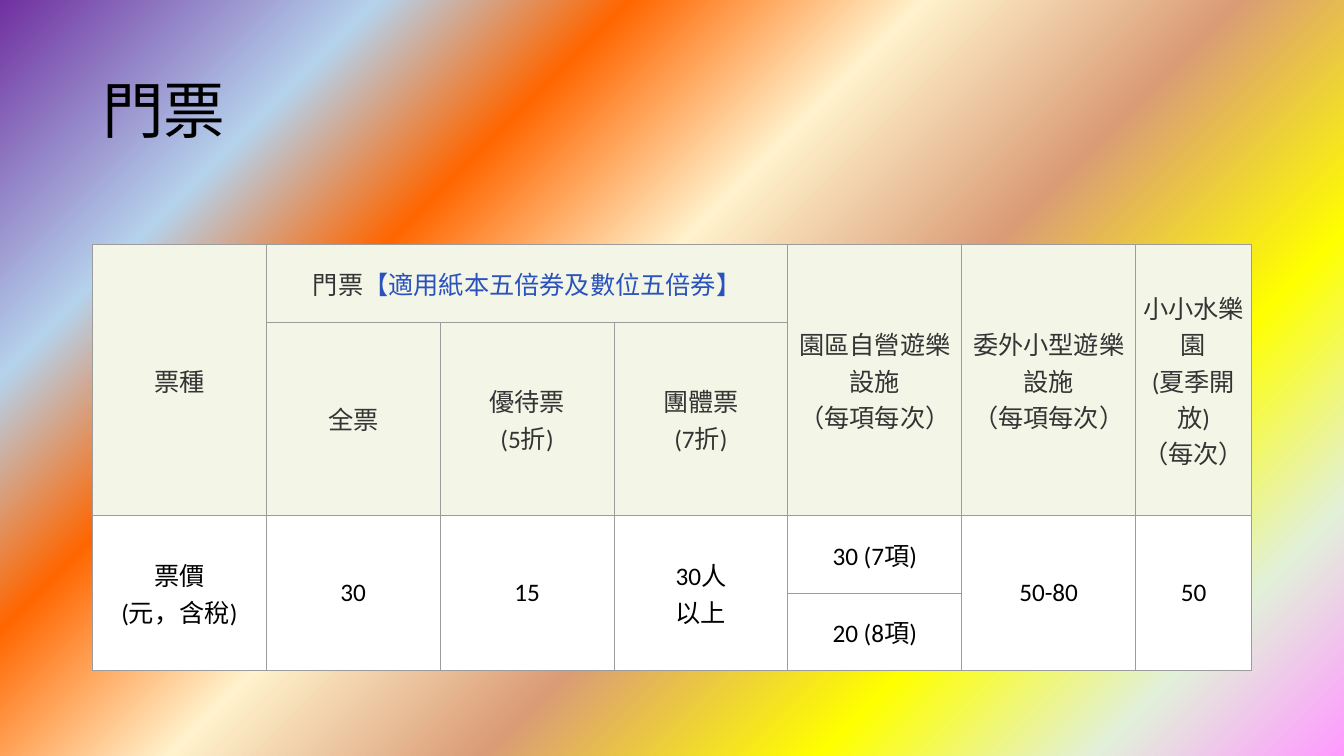
from lxml import etree
from pptx import Presentation
from pptx.dml.color import RGBColor
from pptx.enum.text import MSO_ANCHOR, PP_ALIGN
from pptx.oxml.ns import qn
from pptx.util import Inches, Pt

MIDDLE = MSO_ANCHOR.MIDDLE
LEFT, CENTER = PP_ALIGN.LEFT, PP_ALIGN.CENTER

COLUMNS, ROWS = 160, 90
BLACK, GREY, BLUE = "000000", "343434", "2A52BE"
HEADER_FILL, PRICE_FILL, BORDER = "F3F6E7", "FFFFFF", "9C9C9C"

RAINBOW = [(0, "7030A0"), (18, "B5D2EC"), (30, "FF6600"), (44, "FFF2CC"),
           (59, "DA9C76"), (75, "FFFF00"), (88, "E2F0D9"), (100, "FF99FF")]

COLUMN_WIDTHS = [20.7] * 6 + [13.8]
ROW_HEIGHTS = [9.24, 23.04, 9.24, 9.24]
HEADER_ROWS = 2

TICKETS = [
    (0, 0, 2, 1, [("票種", GREY)]),
    (0, 1, 1, 3, [("門票", GREY), ("【適用紙本五倍券及數位五倍券】", BLUE)]),
    (0, 4, 2, 1, [("園區自營遊樂設施\n（每項每次）", GREY)]),
    (0, 5, 2, 1, [("委外小型遊樂設施\n（每項每次）", GREY)]),
    (0, 6, 2, 1, [("小小水樂園\n(夏季開放)\n（每次）", GREY)]),
    (1, 1, 1, 1, [("全票", GREY)]),
    (1, 2, 1, 1, [("優待票\n(5折)", GREY)]),
    (1, 3, 1, 1, [("團體票\n(7折)", GREY)]),
    (2, 0, 2, 1, [("票價\n(元，含稅)", BLACK)]),
    (2, 1, 2, 1, [("30", BLACK)]),
    (2, 2, 2, 1, [("15", BLACK)]),
    (2, 3, 2, 1, [("30人\n以上", BLACK)]),
    (2, 4, 1, 1, [("30 (7項)", BLACK)]),
    (2, 5, 2, 1, [("50-80", BLACK)]),
    (2, 6, 2, 1, [("50", BLACK)]),
    (3, 4, 1, 1, [("20 (8項)", BLACK)]),
]


def rgb(value):
    return RGBColor.from_string(value)


def apply(target, values):
    for attribute, value in values.items():
        setattr(target, attribute, value)


class TicketSlide:
    """Draws styled elements on one slide, placed in grid columns and rows."""

    font = "Calibri"
    cell_format = {"vertical_anchor": MIDDLE,
                   **{f"margin_{side}": Inches(0.03)
                      for side in ("left", "right", "top", "bottom")}}

    def __init__(self, deck):
        self.slide = deck.slides.add_slide(deck.slide_layouts[6])
        self.column = deck.slide_width / COLUMNS
        self.row = deck.slide_height / ROWS

    def box(self, left, top, width, height):
        return (round(left * self.column), round(top * self.row),
                round(width * self.column), round(height * self.row))

    def background(self, stops, angle):
        fill = self.slide.background.fill
        fill.gradient()
        fill.gradient_angle = 360 - angle
        stop_list = next(self.slide.element.iter(qn("a:gsLst")))
        for stop in list(stop_list):
            stop_list.remove(stop)
        for percent, colour in stops:
            stop = etree.SubElement(stop_list, qn("a:gs"), pos=str(percent * 1000))
            etree.SubElement(stop, qn("a:srgbClr"), val=colour)

    def add_text(self, frame, pieces, size, align):
        paragraph = frame.paragraphs[0]
        paragraph.alignment = align
        for text, colour in pieces:
            for index, line in enumerate(text.split("\n")):
                if index:
                    paragraph.add_line_break()
                run = paragraph.add_run()
                run.text = line
                apply(run.font, {"name": self.font, "size": Pt(size)})
                run.font.color.rgb = rgb(colour)
        return paragraph

    def title(self, text, *place):
        frame = self.slide.shapes.add_textbox(*self.box(*place)).text_frame
        apply(frame, {"word_wrap": True, "vertical_anchor": MIDDLE})
        self.add_text(frame, [(text, BLACK)], 44, LEFT).line_spacing = 0.9

    def style_cell(self, cell, fill):
        apply(cell, self.cell_format)
        properties = cell._tc.get_or_add_tcPr()
        for side in ("lnL", "lnR", "lnT", "lnB"):
            line = etree.SubElement(properties, qn(f"a:{side}"), w=str(Pt(0.75)))
            solid = etree.SubElement(line, qn("a:solidFill"))
            etree.SubElement(solid, qn("a:srgbClr"), val=BORDER)
        cell.fill.solid()
        cell.fill.fore_color.rgb = rgb(fill)

    def table(self, left, top, widths, heights, entries):
        place = self.box(left, top, sum(widths), sum(heights))
        table = self.slide.shapes.add_table(len(heights), len(widths), *place).table
        apply(table, {"first_row": False, "horz_banding": False})
        for column, width in zip(table.columns, widths):
            column.width = round(width * self.column)
        for index, (row, height) in enumerate(zip(table.rows, heights)):
            row.height = round(height * self.row)
            for cell in row.cells:
                self.style_cell(cell, HEADER_FILL if index < HEADER_ROWS else PRICE_FILL)
        for row, column, row_span, column_span, pieces in entries:
            cell = table.cell(row, column)
            if row_span * column_span > 1:
                cell.merge(table.cell(row + row_span - 1, column + column_span - 1))
            self.add_text(cell.text_frame, pieces, 18, CENTER)


def main():
    deck = Presentation()
    apply(deck, {"slide_width": Inches(13.33), "slide_height": Inches(7.5)})
    tickets = TicketSlide(deck)
    tickets.background(RAINBOW, 45)
    tickets.title("門票", 11, 4.8, 138, 17.4)
    tickets.table(11, 29.1, COLUMN_WIDTHS, ROW_HEIGHTS, TICKETS)
    deck.save("out.pptx")


if __name__ == "__main__":
    main()
